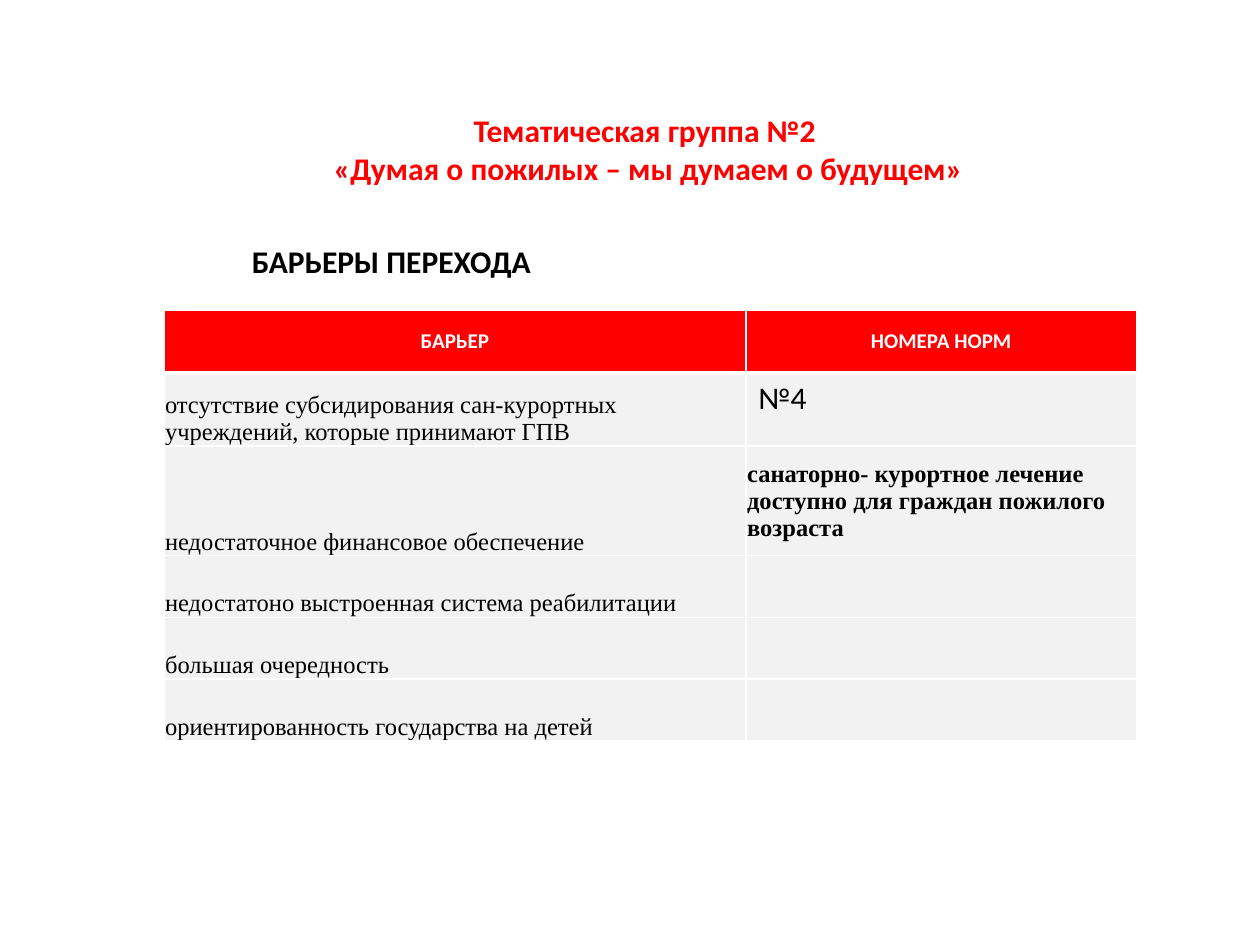
from lxml.etree import SubElement
from pptx import Presentation
from pptx.dml.color import RGBColor
from pptx.enum.text import MSO_ANCHOR, MSO_AUTO_SIZE, PP_ALIGN
from pptx.oxml.ns import qn
from pptx.util import Inches, Pt

RED = RGBColor(0xFF, 0x00, 0x00)
BLACK = RGBColor(0x00, 0x00, 0x00)
WHITE = RGBColor(0xFF, 0xFF, 0xFF)
LIGHT_GREY = RGBColor(0xF2, 0xF2, 0xF2)
SANS = "Calibri"
SERIF = "Times New Roman"

TITLE_LINES = ["Тематическая группа №2 ", "«Думая о пожилых – мы думаем о будущем»"]
HEADERS = ["БАРЬЕР", "НОМЕРА НОРМ"]
BARRIERS = [
    "отсутствие субсидирования сан-курортных учреждений, которые принимают ГПВ",
    "недостаточное финансовое обеспечение",
    "недостатоно выстроенная система реабилитации",
    "большая очередность",
    "ориентированность государства на детей",
]
NORM_NUMBER = "№4"
NORM_TEXT = "санаторно- курортное лечение доступно для граждан пожилого возраста"
COLUMN_WIDTHS = [4.62, 3.1]
ROW_HEIGHTS = [0.5, 0.58, 0.87, 0.49, 0.49, 0.49]


def write_text(frame, lines, size=18, font=SANS, color=BLACK, bold=False,
               align=PP_ALIGN.LEFT, spacing=None):
    for index, line in enumerate(lines):
        paragraph = frame.paragraphs[0] if index == 0 else frame.add_paragraph()
        paragraph.alignment = align
        if spacing:
            paragraph.line_spacing = spacing
        run = paragraph.add_run()
        run.text = line
        run.font.size = Pt(size)
        run.font.name = font
        run.font.bold = bold
        run.font.color.rgb = color


def set_borders(cell, top=1, bottom=1):
    properties = cell._tc.get_or_add_tcPr()
    for tag, width in (("a:lnL", 1), ("a:lnR", 1), ("a:lnT", top), ("a:lnB", bottom)):
        line = SubElement(properties, qn(tag), w=str(Pt(width)))
        fill = SubElement(line, qn("a:solidFill"))
        SubElement(fill, qn("a:srgbClr"), val=str(WHITE))


def format_cell(cell, color, top=1, bottom=1):
    set_borders(cell, top, bottom)
    cell.fill.solid()
    cell.fill.fore_color.rgb = color


def tighten_cell(cell, anchor):
    cell.margin_left = cell.margin_top = cell.margin_right = Inches(0.01)
    cell.margin_bottom = 0
    cell.vertical_anchor = anchor


def place_title(slide, left, top, width, height):
    title = slide.shapes.title
    title.left, title.top, title.width, title.height = left, top, width, height
    frame = title.text_frame
    frame.auto_size = MSO_AUTO_SIZE.NONE
    frame.vertical_anchor = MSO_ANCHOR.MIDDLE
    write_text(frame, TITLE_LINES, color=RED, bold=True, align=PP_ALIGN.CENTER)


def place_subheading(slide, left, top, width, height):
    frame = slide.shapes.add_textbox(left, top, width, height).text_frame
    frame.word_wrap = False
    frame.auto_size = MSO_AUTO_SIZE.SHAPE_TO_FIT_TEXT
    write_text(frame, ["БАРЬЕРЫ ПЕРЕХОДА"], bold=True)


def place_barrier_table(slide, left, top, width, height):
    table = slide.shapes.add_table(
        len(ROW_HEIGHTS), len(COLUMN_WIDTHS), left, top, width, height).table
    for column, share in zip(table.columns, COLUMN_WIDTHS):
        column.width = int(width * share / sum(COLUMN_WIDTHS))
    for row, share in zip(table.rows, ROW_HEIGHTS):
        row.height = int(height * share / sum(ROW_HEIGHTS))

    for column, header in enumerate(HEADERS):
        cell = table.cell(0, column)
        format_cell(cell, RED, bottom=3)
        write_text(cell.text_frame, [header], size=12, color=WHITE, bold=True,
                   align=PP_ALIGN.CENTER, spacing=1.5)

    for row, barrier in enumerate(BARRIERS, start=1):
        for column in range(len(HEADERS)):
            format_cell(table.cell(row, column), LIGHT_GREY, top=3 if row == 1 else 1)
        cell = table.cell(row, 0)
        tighten_cell(cell, MSO_ANCHOR.BOTTOM)
        write_text(cell.text_frame, [barrier], size=14, font=SERIF)

    write_text(table.cell(1, 1).text_frame, [NORM_NUMBER])
    norm_cell = table.cell(2, 1)
    tighten_cell(norm_cell, MSO_ANCHOR.MIDDLE)
    write_text(norm_cell.text_frame, [NORM_TEXT], size=14, font=SERIF, bold=True)


def main():
    presentation = Presentation()
    presentation.slide_width = Inches(10)
    presentation.slide_height = Inches(7.5)
    slide = presentation.slides.add_slide(presentation.slide_layouts.get_by_name("Title Only"))
    place_title(slide, Inches(1.22), Inches(0.68), Inches(7.85), Inches(1.01))
    place_subheading(slide, Inches(1.9), Inches(1.87), Inches(2.44), Inches(0.4))
    place_barrier_table(slide, Inches(1.3), Inches(2.46), Inches(7.72), Inches(3.42))
    presentation.save("out.pptx")


if __name__ == "__main__":
    main()
